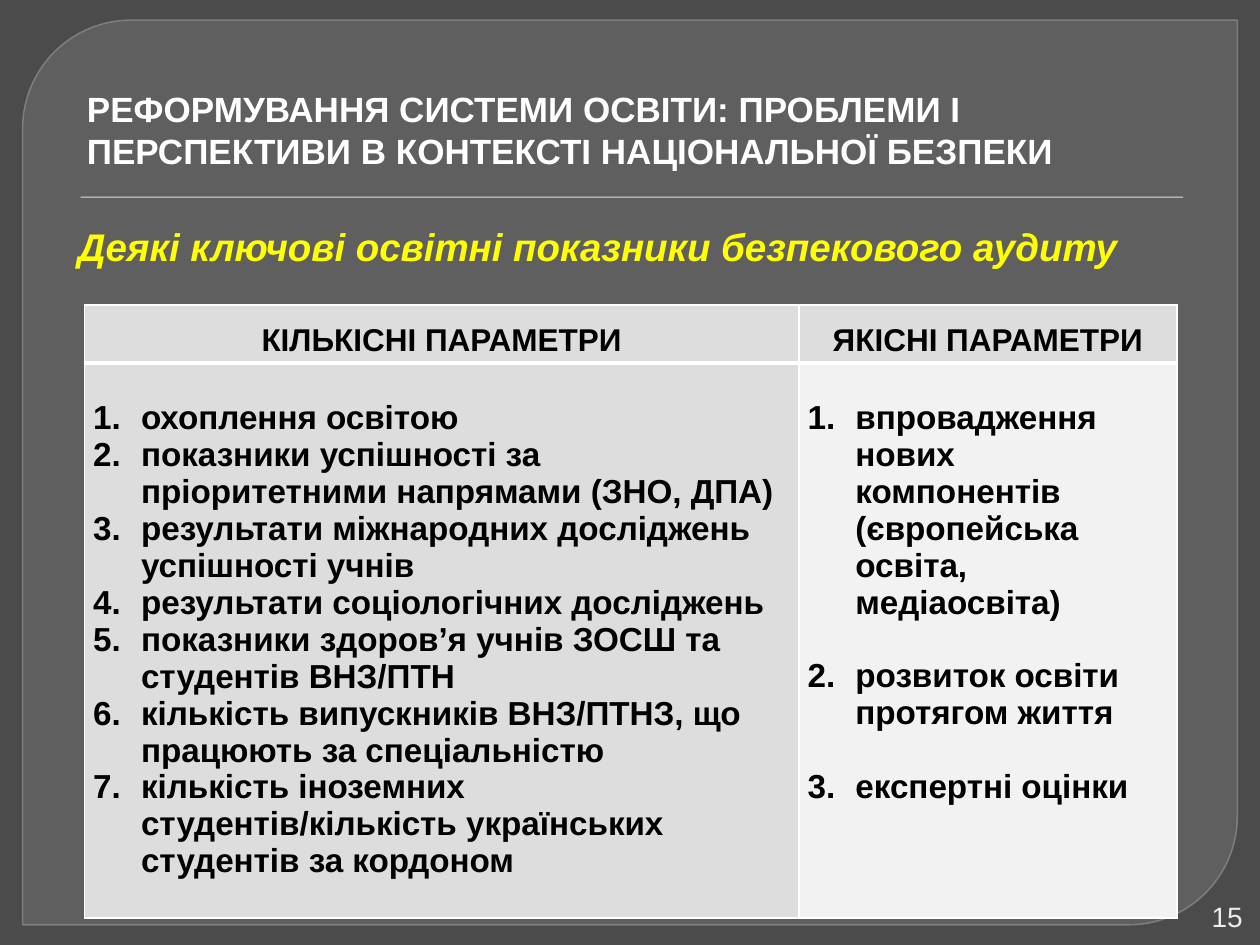
"""Build the slide on key education indicators of a security audit."""
from dataclasses import dataclass

import lxml.etree
import pptx
import pptx.dml.color
import pptx.enum.shapes
import pptx.enum.text
import pptx.oxml.ns
import pptx.shapes.autoshape
import pptx.slide
import pptx.table
import pptx.text.text
import pptx.util
from pptx.util import Inches


@dataclass(frozen=True)
class Theme:
    font: str = "Arial"
    background: str = "4B4B4B"
    panel: str = "6B6B6B"
    panel_line: str = "848484"
    rule: str = "DDDDDD"
    white: str = "FFFFFF"
    subtitle: str = "FFFF00"
    number: str = "EDEDED"
    ink: str = "000000"
    cell: str = "DDDDDD"
    light_cell: str = "F2F2F2"
    title_size: float = 20
    subtitle_size: float = 22
    number_size: float = 16
    header_size: float = 18
    item_size: float = 19


@dataclass(frozen=True)
class Box:
    left: float
    top: float
    width: float
    height: float

    def lengths(self) -> tuple:
        return tuple(Inches(n) for n in (self.left, self.top, self.width, self.height))


@dataclass(frozen=True)
class Column:
    heading: str
    items: tuple[str, ...]
    width: float
    fill: str
    gap: float


THEME = Theme()
ALIGN = pptx.enum.text.PP_ALIGN
ANCHOR = pptx.enum.text.MSO_ANCHOR
SHAPE = pptx.enum.shapes.MSO_SHAPE
TITLE = "РЕФОРМУВАННЯ СИСТЕМИ ОСВІТИ: ПРОБЛЕМИ І ПЕРСПЕКТИВИ В КОНТЕКСТІ НАЦІОНАЛЬНОЇ БЕЗПЕКИ"
SUBTITLE = "Деякі ключові освітні показники безпекового аудиту"
COLUMNS = (
    Column("КІЛЬКІСНІ ПАРАМЕТРИ", (
        "охоплення освітою",
        "показники успішності за пріоритетними напрямами (ЗНО, ДПА)",
        "результати міжнародних досліджень успішності учнів",
        "результати соціологічних досліджень",
        "показники здоров’я учнів ЗОСШ та студентів ВНЗ/ПТН",
        "кількість випускників ВНЗ/ПТНЗ, що працюють за спеціальністю",
        "кількість іноземних студентів/кількість українських студентів за кордоном",
    ), 5.67, THEME.cell, 0),
    Column("ЯКІСНІ ПАРАМЕТРИ", (
        "впровадження нових компонентів (європейська освіта, медіаосвіта)",
        "розвиток освіти протягом життя",
        "експертні оцінки",
    ), 3, THEME.light_cell, 21),
)
ROW_HEIGHTS = (0.46, 4.25)


def rgb(color: str) -> pptx.dml.color.RGBColor:
    return pptx.dml.color.RGBColor.from_string(color)


def add_node(parent, tag: str, **attributes: str):
    return lxml.etree.SubElement(parent, pptx.oxml.ns.qn(tag), attributes)


def set_alpha(fill_parent, percent: int) -> None:
    color = fill_parent.find(pptx.oxml.ns.qn("a:solidFill"))[0]
    add_node(color, "a:alpha", val=str(percent * 1000))


def style_para(para: pptx.text.text._Paragraph, size: float, color: str,
               bold: bool = False, italic: bool = False) -> None:
    for span in para.runs:
        span.font.name = THEME.font
        span.font.size = pptx.util.Pt(size)
        span.font.color.rgb = rgb(color)
        span.font.bold = bold
        span.font.italic = italic


def set_indent(para: pptx.text.text._Paragraph, left: float, first: float) -> None:
    properties = para._p.get_or_add_pPr()
    properties.set("marL", str(Inches(left)))
    properties.set("indent", str(Inches(first)))


def add_shape(page: pptx.slide.Slide, kind: SHAPE, box: Box,
              color: str) -> pptx.shapes.autoshape.Shape:
    shape = page.shapes.add_shape(kind, *box.lengths())
    shape.shadow.inherit = False
    shape.fill.solid()
    shape.fill.fore_color.rgb = rgb(color)
    shape.line.fill.background()
    return shape


def add_panel(page: pptx.slide.Slide) -> None:
    panel = add_shape(page, SHAPE.ROUND_2_DIAG_RECTANGLE, Box(0.18, 0.16, 9.64, 7.18), THEME.panel)
    panel.adjustments[0] = 0.12
    panel.adjustments[1] = 0
    panel.line.color.rgb = rgb(THEME.panel_line)
    panel.line.width = pptx.util.Pt(0.87)
    set_alpha(panel._element.spPr, 65)
    set_alpha(panel.line._ln, 88)


def set_title(page: pptx.slide.Slide) -> None:
    title = page.shapes.title
    title.left, title.top, title.width, title.height = Box(0.53, 0.58, 9, 0.83).lengths()
    frame = title.text_frame
    frame.text = TITLE
    frame.vertical_anchor = ANCHOR.BOTTOM
    frame.auto_size = pptx.enum.text.MSO_AUTO_SIZE.NONE
    para = frame.paragraphs[0]
    para.alignment = ALIGN.LEFT
    set_indent(para, 0.06, 0)
    style_para(para, THEME.title_size, THEME.white, bold=True)


def add_text(page: pptx.slide.Slide, text: str, box: Box, size: float, color: str,
             align: ALIGN = ALIGN.LEFT, anchor: ANCHOR = ANCHOR.TOP,
             emphasis: bool = False) -> None:
    frame = page.shapes.add_textbox(*box.lengths()).text_frame
    frame.word_wrap = True
    frame.vertical_anchor = anchor
    frame.text = text
    frame.paragraphs[0].alignment = align
    style_para(frame.paragraphs[0], size, color, emphasis, emphasis)


def style_cell(cell: pptx.table._Cell, fill: str, top_margin: float,
               top_line: float, bottom_line: float) -> None:
    cell.margin_left = cell.margin_right = Inches(0.07)
    cell.margin_top = Inches(top_margin)
    cell.margin_bottom = 0
    properties = cell._tc.get_or_add_tcPr()
    for side, width in (("L", 1), ("R", 1), ("T", top_line), ("B", bottom_line)):
        line = add_node(properties, f"a:ln{side}", w=str(pptx.util.Pt(width)))
        add_node(add_node(line, "a:solidFill"), "a:srgbClr", val=THEME.white)
    cell.fill.solid()
    cell.fill.fore_color.rgb = rgb(fill)


def fill_header(cell: pptx.table._Cell, heading: str) -> None:
    style_cell(cell, THEME.cell, 0, 1, 3)
    cell.text_frame.text = heading
    para = cell.text_frame.paragraphs[0]
    para.alignment = ALIGN.CENTER
    para.line_spacing = 1.5
    para.space_before = para.space_after = pptx.util.Pt(6)
    style_para(para, THEME.header_size, THEME.ink, bold=True)


def fill_list(cell: pptx.table._Cell, column: Column) -> None:
    style_cell(cell, column.fill, 0.29, 3, 1)
    cell.text_frame.text = "\n".join(column.items)
    for index, para in enumerate(cell.text_frame.paragraphs):
        para.space_before = pptx.util.Pt(column.gap if index else 0)
        set_indent(para, 0.38, -0.38)
        add_node(para._p.get_or_add_pPr(), "a:buAutoNum", type="arabicPeriod")
        style_para(para, THEME.item_size, THEME.ink, bold=True)


def add_parameters(page: pptx.slide.Slide) -> None:
    box = Box(0.67, 2.42, sum(column.width for column in COLUMNS), sum(ROW_HEIGHTS))
    table = page.shapes.add_table(len(ROW_HEIGHTS), len(COLUMNS), *box.lengths()).table
    table.horz_banding = False
    for row, height in zip(table.rows, ROW_HEIGHTS):
        row.height = Inches(height)
    for index, column in enumerate(COLUMNS):
        table.columns[index].width = Inches(column.width)
        fill_header(table.cell(0, index), column.heading)
        fill_list(table.cell(1, index), column)


def main() -> None:
    deck = pptx.Presentation()
    deck.slide_width, deck.slide_height = Inches(10), Inches(7.5)
    page = deck.slides.add_slide(deck.slide_layouts.get_by_name("Title Only"))
    page.background.fill.solid()
    page.background.fill.fore_color.rgb = rgb(THEME.background)
    add_panel(page)
    add_shape(page, SHAPE.RECTANGLE, Box(0.64, 1.56, 8.75, 0.01), THEME.rule)
    title = page.shapes.title._element
    title.getparent().append(title)
    set_title(page)
    add_text(page, "15", Box(9.45, 7.12, 0.51, 0.3), THEME.number_size, THEME.number,
             ALIGN.RIGHT, ANCHOR.MIDDLE)
    add_text(page, SUBTITLE, Box(0.52, 1.72, 9, 0.47), THEME.subtitle_size, THEME.subtitle,
             emphasis=True)
    add_parameters(page)
    deck.save("out.pptx")


if __name__ == "__main__":
    main()
